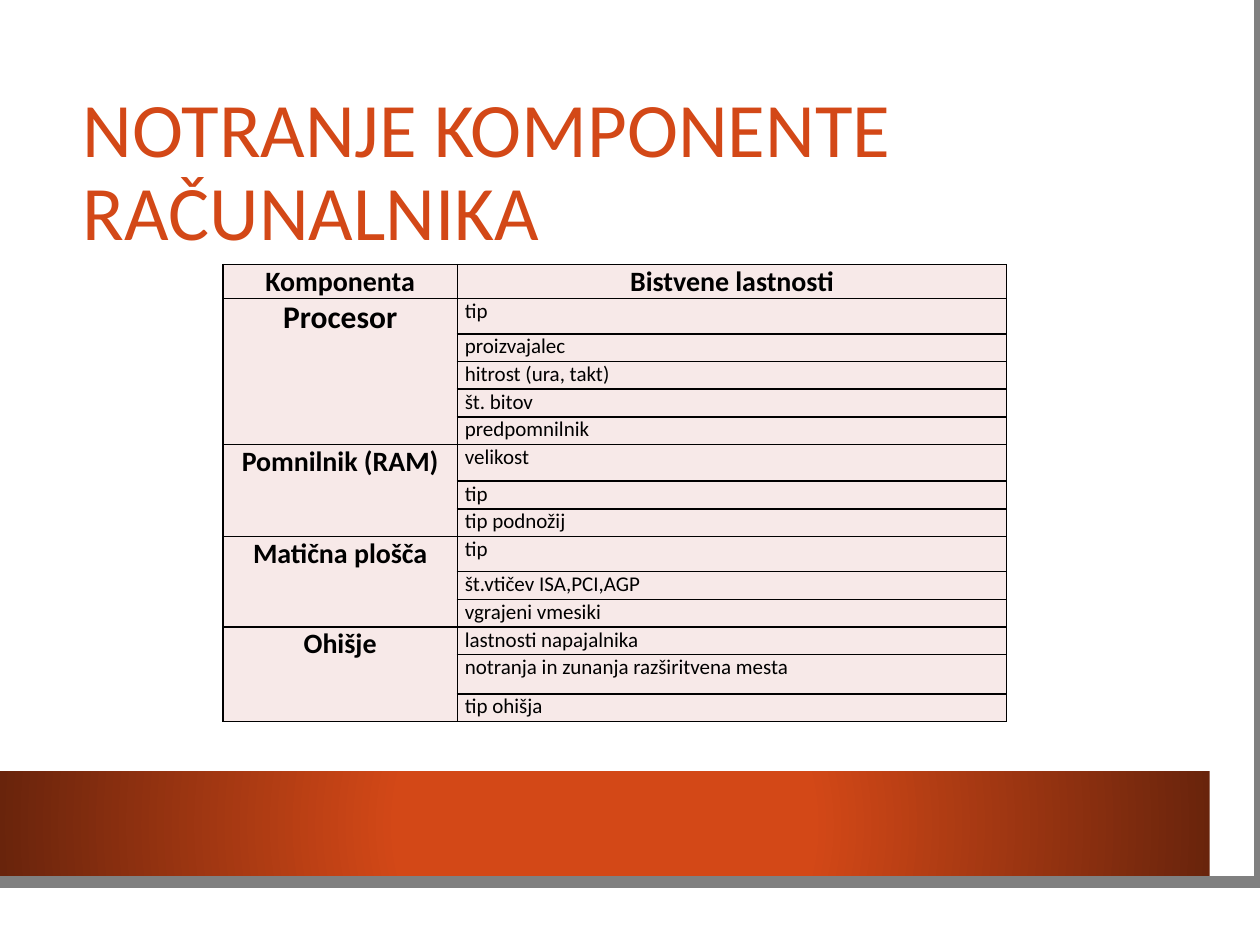
"""Build a slide with a table of internal computer components."""
import pptx
import pptx.dml.color
import pptx.enum.shapes
import pptx.enum.text
import pptx.oxml
import pptx.util

Inches = pptx.util.Inches
Pt = pptx.util.Pt
RGBColor = pptx.dml.color.RGBColor
ALIGN = pptx.enum.text.PP_ALIGN
ANCHOR = pptx.enum.text.MSO_ANCHOR

ORANGE = RGBColor(0xD3, 0x48, 0x17)
BROWN = RGBColor(0x69, 0x24, 0x0C)
GRAY = RGBColor(0x80, 0x80, 0x80)
ROSE = RGBColor(0xF7, 0xE9, 0xE8)
BLACK = RGBColor(0, 0, 0)
WHITE = RGBColor(0xFF, 0xFF, 0xFF)
NAMESPACE = 'xmlns:a="http://schemas.openxmlformats.org/drawingml/2006/main"'

TITLE = "NOTRANJE KOMPONENTE RAČUNALNIKA"
HEADERS = ("Komponenta", "Bistvene lastnosti")
ROW_HEIGHT = 0.22
HEADER_HEIGHT = 0.27
COMPONENTS = [
    ("Procesor", 18, [("tip", 0.28), ("proizvajalec", ROW_HEIGHT), ("hitrost (ura, takt)", ROW_HEIGHT),
                      ("št. bitov", ROW_HEIGHT), ("predpomnilnik", ROW_HEIGHT)]),
    ("Pomnilnik (RAM)", 16, [("velikost", 0.29), ("tip", ROW_HEIGHT), ("tip podnožij", ROW_HEIGHT)]),
    ("Matična plošča", 16, [("tip", 0.28), ("št.vtičev ISA,PCI,AGP", ROW_HEIGHT),
                            ("vgrajeni vmesiki", ROW_HEIGHT)]),
    ("Ohišje", 16, [("lastnosti napajalnika", ROW_HEIGHT),
                    ("notranja in zunanja razširitvena mesta", 0.31), ("tip ohišja", ROW_HEIGHT)]),
]
COLUMN_WIDTHS = (1.86, 4.36)
CELL_FORMAT = {"margin_left": Inches(0.06), "margin_right": Inches(0.06),
               "margin_top": 0, "margin_bottom": 0, "vertical_anchor": ANCHOR.TOP}
FRAME_POINTS = [(9.62, 0), (9.64, 7.02), (-0.02, 7.01)]


def set_format(target, values):
    for name, value in values.items():
        setattr(target, name, value)


def write(frame, text, size, color=BLACK, bold=False, align=ALIGN.LEFT):
    paragraph = frame.paragraphs[0]
    paragraph.text = text
    paragraph.alignment = align
    set_format(paragraph.font, {"name": "Calibri", "size": Pt(size), "bold": bold})
    paragraph.font.color.rgb = color
    return paragraph


def add_rectangle(slide, *box):
    shape = slide.shapes.add_shape(pptx.enum.shapes.MSO_SHAPE.RECTANGLE, *map(Inches, box))
    shape.shadow.inherit = False
    shape.line.fill.background()
    return shape


def add_background(slide):
    panel = add_rectangle(slide, 0, 0, 9.83, 7.27)
    panel.fill.solid()
    panel.fill.fore_color.rgb = WHITE

    band = add_rectangle(slide, 0, 6.12, 9.6, 0.85)
    stops = "".join(f'<a:gs pos="{position}"><a:srgbClr val="{color}"/></a:gs>'
                    for position, color in ((34000, ORANGE), (100000, BROWN)))
    gradient = pptx.oxml.parse_xml(
        f'<a:gradFill {NAMESPACE} rotWithShape="1"><a:gsLst>{stops}</a:gsLst><a:path path="circle">'
        '<a:fillToRect l="50000" t="50000" r="50000" b="50000"/></a:path></a:gradFill>')
    band.element.spPr.find(pptx.oxml.ns.qn("a:prstGeom")).addnext(gradient)

    builder = slide.shapes.build_freeform(*FRAME_POINTS[0], scale=Inches(1))
    builder.add_line_segments(FRAME_POINTS[1:], close=False)
    frame = builder.convert_to_shape()
    frame.shadow.inherit = False
    frame.fill.background()
    frame.line.color.rgb = GRAY
    frame.line.width = Pt(6.5)


def add_title(slide):
    title = slide.shapes.add_textbox(*map(Inches, (0.56, 0.75, 8.53, 1.26)))
    set_format(title.text_frame, {"word_wrap": True, "vertical_anchor": ANCHOR.MIDDLE})
    write(title.text_frame, TITLE, 44, ORANGE).line_spacing = 0.9


def style_cell(cell):
    set_format(cell, CELL_FORMAT)
    properties = cell._tc.get_or_add_tcPr()
    for side in ("lnL", "lnR", "lnT", "lnB"):
        properties.append(pptx.oxml.parse_xml(
            f'<a:{side} {NAMESPACE} w="12700"><a:solidFill><a:srgbClr val="{BLACK}"/></a:solidFill></a:{side}>'))
    cell.fill.solid()
    cell.fill.fore_color.rgb = ROSE


def add_component_table(slide):
    heights = [HEADER_HEIGHT] + [height for _, _, features in COMPONENTS for _, height in features]
    box = (1.77, 2.1, sum(COLUMN_WIDTHS), sum(heights))
    table = slide.shapes.add_table(len(heights), len(COLUMN_WIDTHS), *map(Inches, box)).table
    set_format(table, {"first_row": False, "horz_banding": False})
    for column, width in zip(table.columns, COLUMN_WIDTHS):
        column.width = Inches(width)
    for row, height in zip(table.rows, heights):
        row.height = Inches(height)
    for cell in table.iter_cells():
        style_cell(cell)
        write(cell.text_frame, "", 12)

    for index, header in enumerate(HEADERS):
        write(table.cell(0, index).text_frame, header, 16, bold=True, align=ALIGN.CENTER)
    first = 1
    for name, size, features in COMPONENTS:
        last = first + len(features) - 1
        table.cell(first, 0).merge(table.cell(last, 0))
        write(table.cell(first, 0).text_frame, name, size, bold=True, align=ALIGN.CENTER)
        for row, (feature, _) in enumerate(features, first):
            write(table.cell(row, 1).text_frame, feature, 12)
        first = last + 1


def main():
    presentation = pptx.Presentation()
    set_format(presentation, {"slide_width": Inches(10), "slide_height": Inches(7.5)})
    slide = presentation.slides.add_slide(presentation.slide_layouts[6])
    add_background(slide)
    add_title(slide)
    add_component_table(slide)
    presentation.save("out.pptx")


if __name__ == "__main__":
    main()
